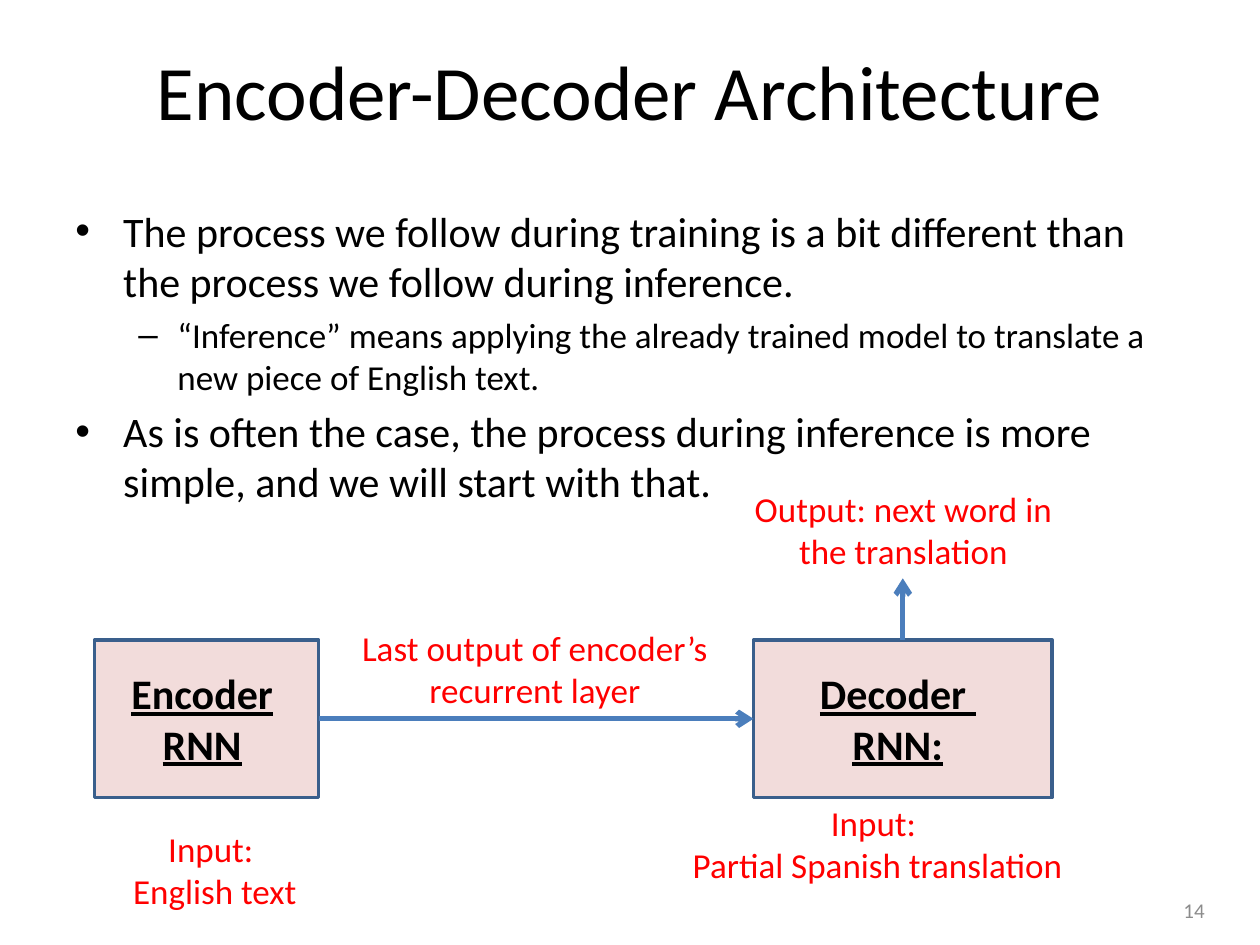
from pptx import Presentation
from pptx.dml.color import RGBColor
from pptx.enum.shapes import MSO_CONNECTOR, MSO_SHAPE
from pptx.enum.text import MSO_ANCHOR as ANCHOR, PP_ALIGN as ALIGN
from pptx.oxml.ns import qn
from pptx.util import Inches, Pt
from lxml.etree import SubElement

COLORS = {
    "text": "000000",
    "label": "FF0000",
    "number": "8C8C8C",
    "box_fill": "F2DCDB",
    "box_line": "3A5F8C",
    "arrow": "4B7EBC",
}
FONT = "Calibri"


def color(name):
    return RGBColor.from_string(COLORS[name])


def add_text(frame, text, size=20, ink="label", align=ALIGN.CENTER, strong=False,
             bullet=None, margin=0, hanging=0):
    """Append a paragraph; a newline in the text becomes a line break."""
    para = frame.paragraphs[0]
    if para.runs:
        para = frame.add_paragraph()
    para.text = text
    para.alignment = align
    for span in para.runs:
        font = span.font
        font.name, font.size = FONT, Pt(size)
        font.color.rgb = color(ink)
        font.bold = font.underline = strong
    if bullet:
        para.space_before = Pt(size * 0.2)
        props = para._p.get_or_add_pPr()
        props.set("marL", str(Inches(margin)))
        props.set("indent", str(-Inches(hanging)))
        SubElement(props, qn("a:buFont"), typeface="Arial")
        SubElement(props, qn("a:buChar"), char=bullet)


deck = Presentation()
deck.slide_width, deck.slide_height = Inches(10), Inches(7.5)
page = deck.slides.add_slide(deck.slide_layouts[6])

# Encoder and decoder boxes
BOX_TOP, BOX_HEIGHT = 5.08, 1.25
ENCODER_LEFT, ENCODER_WIDTH = 0.75, 1.78
DECODER_LEFT, DECODER_WIDTH = 5.98, 2.37
for left, width in [(ENCODER_LEFT, ENCODER_WIDTH), (DECODER_LEFT, DECODER_WIDTH)]:
    box = page.shapes.add_shape(MSO_SHAPE.RECTANGLE, Inches(left), Inches(BOX_TOP),
                                Inches(width), Inches(BOX_HEIGHT))
    box.shadow.inherit = False
    box.fill.solid()
    box.fill.fore_color.rgb = color("box_fill")
    box.line.color.rgb = color("box_line")
    box.line.width = Pt(2)

# Arrows: encoder to decoder, decoder to output
middle = BOX_TOP + BOX_HEIGHT / 2
decoder_center = DECODER_LEFT + DECODER_WIDTH / 2
for x1, y1, x2, y2 in [
    (ENCODER_LEFT + ENCODER_WIDTH, middle, DECODER_LEFT, middle),
    (decoder_center, BOX_TOP, decoder_center, 4.59),
]:
    arrow = page.shapes.add_connector(MSO_CONNECTOR.STRAIGHT, Inches(x1), Inches(y1),
                                      Inches(x2), Inches(y2))
    arrow.line.color.rgb = color("arrow")
    arrow.line.width = Pt(3)
    SubElement(arrow.line._get_or_add_ln(), qn("a:tailEnd"), type="arrow")
    SubElement(arrow._element.spPr, qn("a:effectLst"))

# Text boxes: position, anchor, then paragraphs as (text, format)
heading = dict(size=24, ink="text", strong=True)
point = dict(size=24, ink="text", align=ALIGN.LEFT, bullet="•", margin=0.38, hanging=0.38)
subpoint = dict(point, size=20, bullet="–", margin=0.81, hanging=0.31)
texts = [
    ((0.5, 0.17, 9, 1.08), ANCHOR.MIDDLE,
     [("Encoder-Decoder Architecture", dict(size=44, ink="text"))]),
    ((0.5, 1.58, 9, 1.83), ANCHOR.TOP, [
        ("The process we follow during training is a bit different than "
         "the process we follow during inference.", point),
        ("“Inference” means applying the already trained model to translate "
         "a new piece of English text.", subpoint),
        ("As is often the case, the process during inference is more simple, "
         "and we will start with that.", point),
    ]),
    ((0.92, 5.25, 1.37, 0.91), ANCHOR.TOP, [("Encoder", heading), ("RNN", heading)]),
    ((6.27, 5.25, 1.71, 0.91), ANCHOR.TOP, [("Decoder \nRNN:", heading)]),
    ((2.75, 4.92, 2.99, 0.77), ANCHOR.TOP,
     [("Last output of encoder’s recurrent layer", {})]),
    ((5.88, 3.82, 2.58, 0.77), ANCHOR.TOP, [("Output: next word in the translation", {})]),
    ((5.35, 6.31, 3.23, 0.77), ANCHOR.TOP, [("Input: \nPartial Spanish translation", {})]),
    ((0.87, 6.52, 1.67, 0.77), ANCHOR.TOP, [("Input: \nEnglish text", {})]),
    ((7.33, 7.02, 2.33, 0.4), ANCHOR.MIDDLE,
     [("14", dict(size=12, ink="number", align=ALIGN.RIGHT))]),
]
for place, anchor, paragraphs in texts:
    frame = page.shapes.add_textbox(*map(Inches, place)).text_frame
    frame.word_wrap = True
    frame.vertical_anchor = anchor
    for text, style in paragraphs:
        add_text(frame, text, **style)

deck.save("out.pptx")
